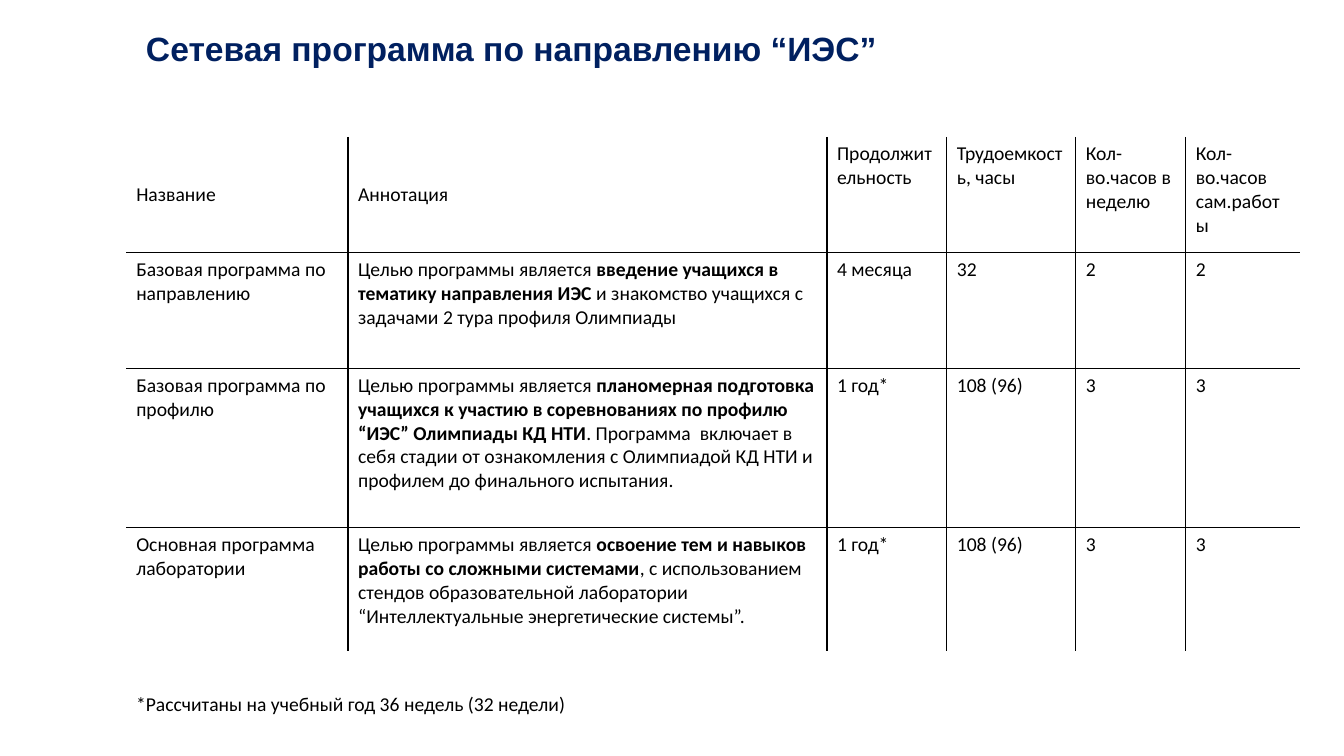
from lxml.etree import SubElement
from pptx import Presentation
from pptx.dml.color import RGBColor
from pptx.enum.text import MSO_ANCHOR, MSO_AUTO_SIZE
from pptx.oxml.ns import qn
from pptx.util import Cm, Pt

NAVY = RGBColor(0x00, 0x20, 0x60)
BLACK = RGBColor(0x00, 0x00, 0x00)
PLAIN_TABLE_STYLE = "{2D5ABB26-0587-4C30-8999-92F81FD0307C}"

COLUMN_WIDTHS = (5.59, 12.07, 3.02, 3.25, 2.77, 2.87)
ROW_HEIGHTS = (2.92, 2.92, 4.01, 3.1)
GOAL = "Целью программы является "
PROGRAMS = (
    ("Название", "Аннотация", "Продолжительность", "Трудоемкость, часы",
     "Кол-во.часов в неделю", "Кол-во.часов сам.работы"),
    ("Базовая программа по направлению",
     (GOAL, "введение учащихся в тематику направления ИЭС",
      " и знакомство учащихся с задачами 2 тура профиля Олимпиады"),
     "4 месяца", "32", "2", "2"),
    ("Базовая программа по профилю",
     (GOAL, "планомерная подготовка учащихся к участию в соревнованиях "
            "по профилю “ИЭС” Олимпиады КД НТИ",
      ". Программа  включает в себя стадии от ознакомления с Олимпиадой "
      "КД НТИ и профилем до финального испытания."),
     "1 год*", "108 (96)", "3", "3"),
    ("Основная программа лаборатории",
     (GOAL, "освоение тем и навыков работы со сложными системами",
      ", с использованием стендов образовательной лаборатории "
      "“Интеллектуальные энергетические системы”."),
     "1 год*", "108 (96)", "3", "3"),
)


class ProgramSlide:
    heading_font = "Arial"
    body_font = "Calibri"
    body_size = 14
    border_width = 1

    def __init__(self, presentation):
        self.slide = presentation.slides.add_slide(presentation.slide_layouts[6])

    def style_run(self, run, font, size, color, bold=False):
        run.font.name = font
        run.font.size = Pt(size)
        run.font.color.rgb = color
        run.font.bold = bold

    def text_box(self, text, left, top, width, height, font, size, color,
                 bold=False, wrap=True):
        box = self.slide.shapes.add_textbox(Cm(left), Cm(top), Cm(width), Cm(height))
        text_frame = box.text_frame
        text_frame.word_wrap = wrap
        text_frame.auto_size = MSO_AUTO_SIZE.SHAPE_TO_FIT_TEXT
        text_frame.text = text
        self.style_run(text_frame.paragraphs[0].runs[0], font, size, color, bold)

    def title(self, text):
        self.text_box(text, 3.43, 0.58, 19.69, 1.27, self.heading_font, 24, NAVY, bold=True)

    def footnote(self, text):
        self.text_box(text, 3.18, 17.32, 11.43, 0.86, self.body_font, self.body_size,
                      BLACK, wrap=False)

    def border(self, cell, side):
        line = SubElement(cell._tc.get_or_add_tcPr(), qn(f"a:ln{side}"),
                          w=str(Pt(self.border_width)))
        fill = SubElement(line, qn("a:solidFill"))
        SubElement(fill, qn("a:srgbClr"), val=str(BLACK))

    def cell(self, cell, content):
        parts = (content,) if isinstance(content, str) else content
        paragraph = cell.text_frame.paragraphs[0]
        for index, part in enumerate(parts):
            run = paragraph.add_run()
            run.text = part
            self.style_run(run, self.body_font, self.body_size, BLACK, bold=index == 1)

    def table(self, rows, left, top, column_widths, row_heights):
        last_row, last_column = len(rows) - 1, len(column_widths) - 1
        table = self.slide.shapes.add_table(
            len(rows), len(column_widths), Cm(left), Cm(top),
            Cm(sum(column_widths)), Cm(sum(row_heights))).table
        table.horz_banding = False
        table._tbl.tblPr.find(qn("a:tableStyleId")).text = PLAIN_TABLE_STYLE
        for column, width in zip(table.columns, column_widths):
            column.width = Cm(width)
        for row, height in zip(table.rows, row_heights):
            row.height = Cm(height)
        for row_index, contents in enumerate(rows):
            for column_index, content in enumerate(contents):
                cell = table.cell(row_index, column_index)
                self.cell(cell, content)
                inner_sides = {"L": column_index > 0, "R": column_index < last_column,
                               "T": row_index > 0, "B": row_index < last_row}
                for side, inner in inner_sides.items():
                    if inner:
                        self.border(cell, side)
                cell.fill.background()
        for column_index in range(2):
            table.cell(0, column_index).vertical_anchor = MSO_ANCHOR.MIDDLE


def main():
    presentation = Presentation()
    presentation.slide_width = Cm(33.87)
    presentation.slide_height = Cm(19.05)
    program_slide = ProgramSlide(presentation)
    program_slide.title("Сетевая программа по направлению “ИЭС”")
    program_slide.footnote("*Рассчитаны на учебный год 36 недель (32 недели)")
    program_slide.table(PROGRAMS, 3.18, 3.45, COLUMN_WIDTHS, ROW_HEIGHTS)
    presentation.save("out.pptx")


if __name__ == "__main__":
    main()
